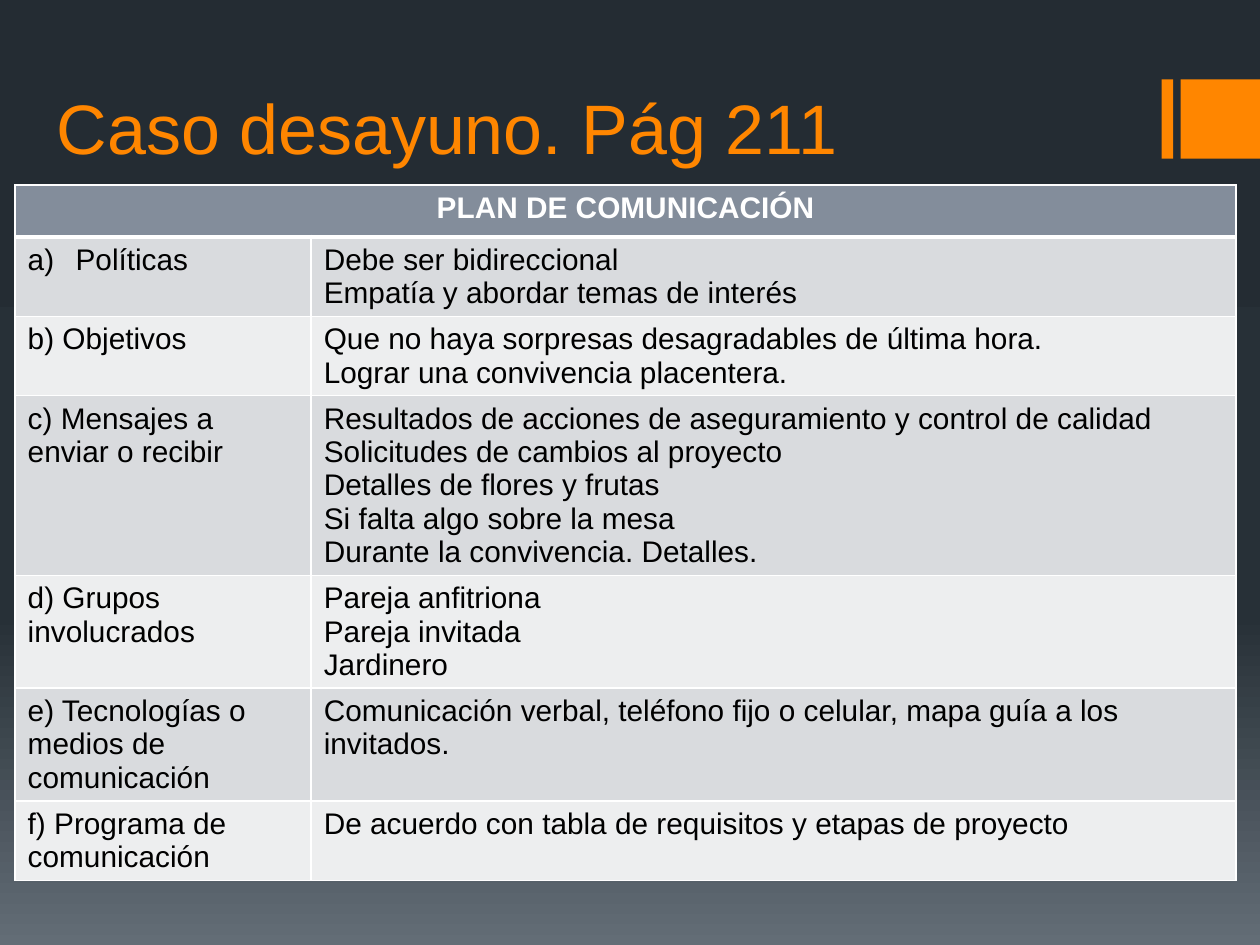
"""Build the communication plan slide of the breakfast case."""
from copy import deepcopy

from lxml.etree import SubElement as Sub
from pptx import Presentation
from pptx.dml.color import RGBColor as Color
from pptx.enum.shapes import MSO_SHAPE as Shape
from pptx.enum.text import MSO_ANCHOR as Anchor, MSO_AUTO_SIZE as Fit, PP_ALIGN as Align
from pptx.oxml.ns import qn
from pptx.util import Inches, Pt

COLORS = {
    "accent": "FF8600", "header": "838D9B", "odd": "D9DBDE", "even": "EDEEEF",
    "white": "FFFFFF", "black": "000000",
}
BACKDROP = [(0, "242C33"), (0.65, "273037"), (1, "636D76")]
PLAN = [
    ("Políticas", ["Debe ser bidireccional", "Empatía y abordar temas de interés"]),
    ("b) Objetivos", ["Que no haya sorpresas desagradables de última hora.",
                      "Lograr una convivencia placentera."]),
    ("c) Mensajes a enviar o recibir", [
        "Resultados de acciones de aseguramiento y control de calidad",
        "Solicitudes de cambios al proyecto", "Detalles de flores y frutas",
        "Si falta algo sobre la mesa", "Durante la convivencia. Detalles."]),
    ("d) Grupos involucrados", ["Pareja anfitriona", "Pareja invitada", "Jardinero"]),
    ("e) Tecnologías o medios de comunicación", [
        "Comunicación verbal, teléfono fijo o celular, mapa guía a los invitados."]),
    ("f) Programa de comunicación", [
        "De acuerdo con tabla de requisitos y etapas de proyecto"]),
]


def write(frame, lines, color, **formats):
    """Fill a text frame with one formatted paragraph per line."""
    frame.text = "\n".join(lines)
    for para in frame.paragraphs:
        for span in para.runs:
            span.font.color.rgb = Color.from_string(COLORS[color])
            for name, value in {"name": "Arial", **formats}.items():
                setattr(span.font, name, value)


def paint(cell, color, top, bottom):
    """Give a cell white borders and a solid fill."""
    props = cell._tc.get_or_add_tcPr()
    for side, weight in {"L": 1, "R": 1, "T": top, "B": bottom}.items():
        line = Sub(props, qn(f"a:ln{side}"), w=str(Pt(weight)))
        Sub(Sub(line, qn("a:solidFill")), qn("a:srgbClr"), val=COLORS["white"])
    cell.fill.solid()
    cell.fill.fore_color.rgb = Color.from_string(COLORS[color])


deck = Presentation()
deck.slide_width, deck.slide_height = Inches(10), Inches(7.5)
column, row = deck.slide_width // 100, deck.slide_height // 75
page = deck.slides.add_slide(deck.slide_layouts[5])

backdrop = page.background.fill
backdrop.gradient()
backdrop.gradient_angle = 270
stop_list = page.element.find(".//" + qn("a:gsLst"))
stop_list.append(deepcopy(stop_list[-1]))
for stop, (position, color) in zip(backdrop.gradient_stops, BACKDROP):
    stop.position = position
    stop.color.rgb = Color.from_string(color)

for left, width in [(92.2, 0.9), (93.7, 6.3)]:
    bar = page.shapes.add_shape(Shape.RECTANGLE, int(left * column), int(6.3 * row),
                                int(width * column), int(6.3 * row))
    bar.shadow.inherit = False
    bar.fill.solid()
    bar.fill.fore_color.rgb = Color.from_string(COLORS["accent"])
    bar.line.fill.background()

title = page.shapes.title
title_box = {"left": 3.5 * column, "top": 1.3 * row, "width": 80 * column, "height": 12.6 * row}
for name, value in title_box.items():
    setattr(title, name, int(value))
title_format = {"auto_size": Fit.NONE, "word_wrap": True, "vertical_anchor": Anchor.BOTTOM}
for name, value in title_format.items():
    setattr(title.text_frame, name, value)
write(title.text_frame, ["Caso desayuno. Pág 211"], "accent", size=Pt(40))
title.text_frame.paragraphs[0].alignment = Align.LEFT

row_count = len(PLAN) + 1
table = page.shapes.add_table(row_count, 2, int(1.2 * column), int(14.7 * row),
                              int(96.9 * column), int(4.1 * row) * row_count).table
for table_column, width in zip(table.columns, (23.5, 73.4)):
    table_column.width = int(width * column)

header = table.cell(0, 0)
for cell in table.rows[0].cells:
    paint(cell, "header", 1, 3)
header.merge(table.cell(0, 1))
write(header.text_frame, ["PLAN DE COMUNICACIÓN"], "white", size=Pt(17), bold=True)
header.text_frame.paragraphs[0].alignment = Align.CENTER

for index, (topic, details) in enumerate(PLAN, start=1):
    for cell, lines in zip(table.rows[index].cells, ([topic], details)):
        paint(cell, "odd" if index % 2 else "even", 3 if index == 1 else 1, 1)
        write(cell.text_frame, lines, "black", size=Pt(17), bold=False)

numbering = table.cell(1, 0).text_frame.paragraphs[0]._p.get_or_add_pPr()
indent = int(3.8 * column)
numbering.set("marL", str(indent))
numbering.set("indent", str(-indent))
Sub(numbering, qn("a:buAutoNum"), type="alphaLcParenR")

deck.save("out.pptx")
